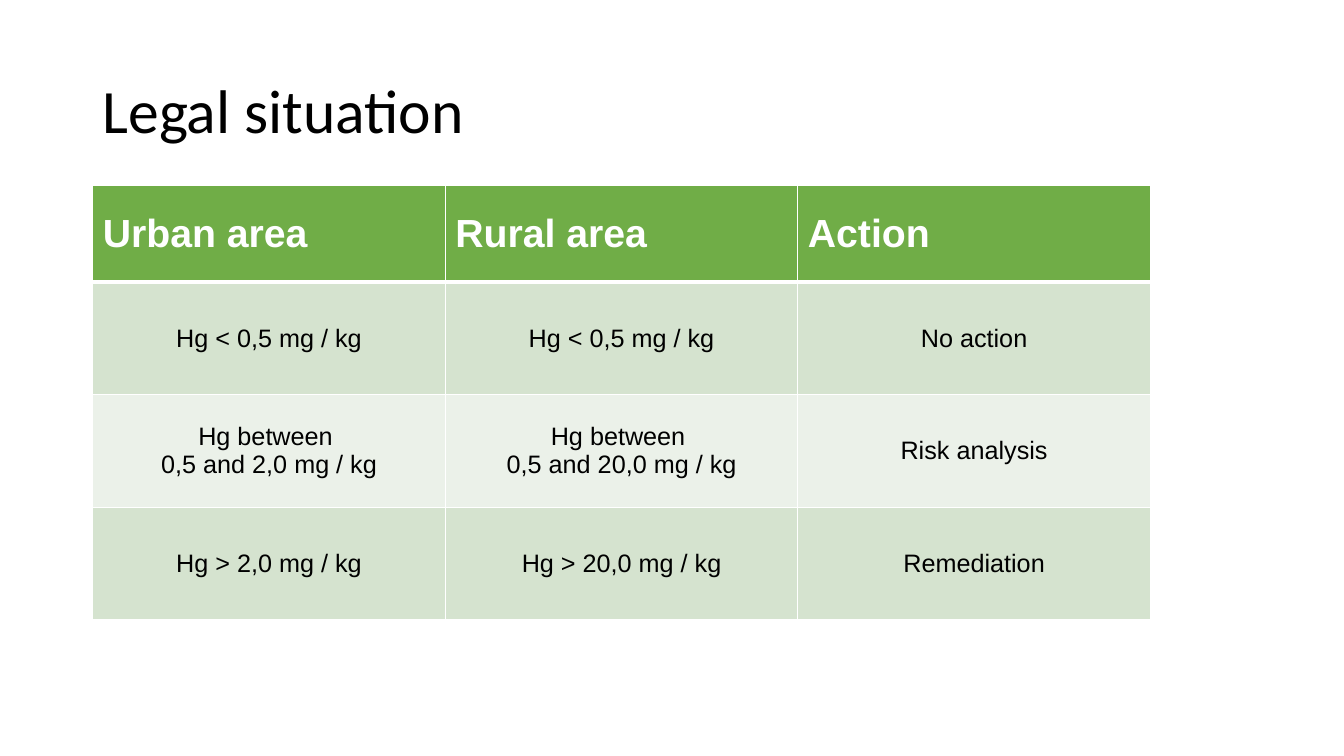
from dataclasses import dataclass

from lxml import etree
from pptx import Presentation
from pptx import util as u
from pptx.dml.color import RGBColor
from pptx.enum import text
from pptx.oxml import ns


@dataclass(frozen=True)
class Theme:
    head: str = "70AD47"
    bands: tuple = ("D5E3CF", "EBF1E9")
    white: str = "FFFFFF"
    ink: str = "000000"
    title_font: str = "Calibri"
    body_font: str = "Arial"
    title_size: int = 44
    head_size: int = 28
    body_size: int = 18
    thin: int = 1
    thick: int = 3


THEME = Theme()
ROWS = [
    ["Urban area", "Rural area", "Action"],
    ["Hg < 0,5 mg / kg", "Hg < 0,5 mg / kg", "No action"],
    ["Hg between \n0,5 and 2,0 mg / kg", "Hg between \n0,5 and 20,0 mg / kg", "Risk analysis"],
    ["Hg > 2,0 mg / kg", "Hg > 20,0 mg / kg", "Remediation"],
]


def write(frame, words, font, size, color, bold=False, align=text.PP_ALIGN.LEFT):
    for i, line in enumerate(words.split("\n")):
        para = frame.add_paragraph() if i else frame.paragraphs[0]
        para.alignment = align
        run = para.add_run()
        run.text = line
        run.font.name = font
        run.font.size = u.Pt(size)
        run.font.bold = bold
        run.font.color.rgb = RGBColor.from_string(color)


def border(cell, widths):
    props = cell._tc.get_or_add_tcPr()
    for i, (side, width) in enumerate(zip("LRTB", widths)):
        line = etree.Element(ns.qn(f"a:ln{side}"), w=str(u.Pt(width)))
        fill = etree.SubElement(line, ns.qn("a:solidFill"))
        etree.SubElement(fill, ns.qn("a:srgbClr"), val=THEME.white)
        props.insert(i, line)


def add_title(slide, left, top, width, height):
    box = slide.shapes.add_textbox(left, top, width, height)
    frame = box.text_frame
    frame.word_wrap = True
    frame.vertical_anchor = text.MSO_ANCHOR.MIDDLE
    write(frame, "Legal situation", THEME.title_font, THEME.title_size, THEME.ink)
    frame.paragraphs[0].line_spacing = 0.9


def add_limits(slide, left, top, width, height):
    count = len(ROWS[0])
    table = slide.shapes.add_table(len(ROWS), count, left, top, width, height).table
    first = u.Inches(0.96)
    for col in table.columns:
        col.width = width // count
    for r, words in enumerate(ROWS):
        head = r == 0
        table.rows[r].height = first if head else (height - first) // (len(ROWS) - 1)
        for c, word in enumerate(words):
            cell = table.cell(r, c)
            cell.vertical_anchor = text.MSO_ANCHOR.MIDDLE
            cell.fill.solid()
            color = THEME.head if head else THEME.bands[(r - 1) % 2]
            cell.fill.fore_color.rgb = RGBColor.from_string(color)
            above = THEME.thick if r == 1 else THEME.thin
            below = THEME.thick if head else THEME.thin
            border(cell, (THEME.thin, THEME.thin, above, below))
            if head:
                write(cell.text_frame, word, THEME.body_font, THEME.head_size, THEME.white, True)
            else:
                write(cell.text_frame, word, THEME.body_font, THEME.body_size, THEME.ink,
                      align=text.PP_ALIGN.CENTER)


def main():
    deck = Presentation()
    deck.slide_width = u.Inches(13.33)
    deck.slide_height = u.Inches(7.5)
    slide = deck.slides.add_slide(deck.slide_layouts[6])
    left = u.Inches(0.92)
    add_title(slide, left, u.Inches(0.4), u.Inches(11.5), u.Inches(1.45))
    add_limits(slide, left, u.Inches(1.84), u.Inches(10.49), u.Inches(4.31))
    deck.save("out.pptx")


if __name__ == "__main__":
    main()
